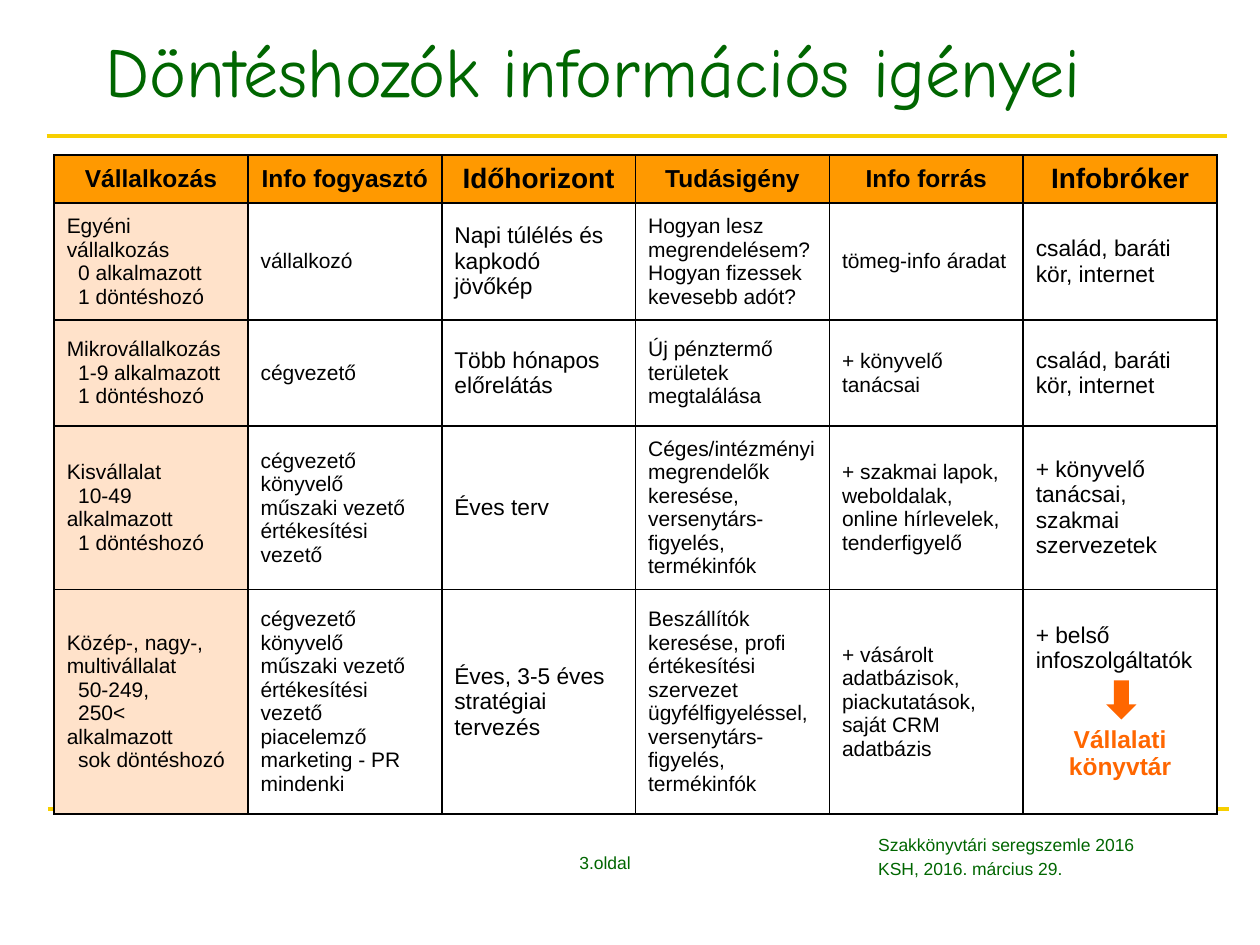
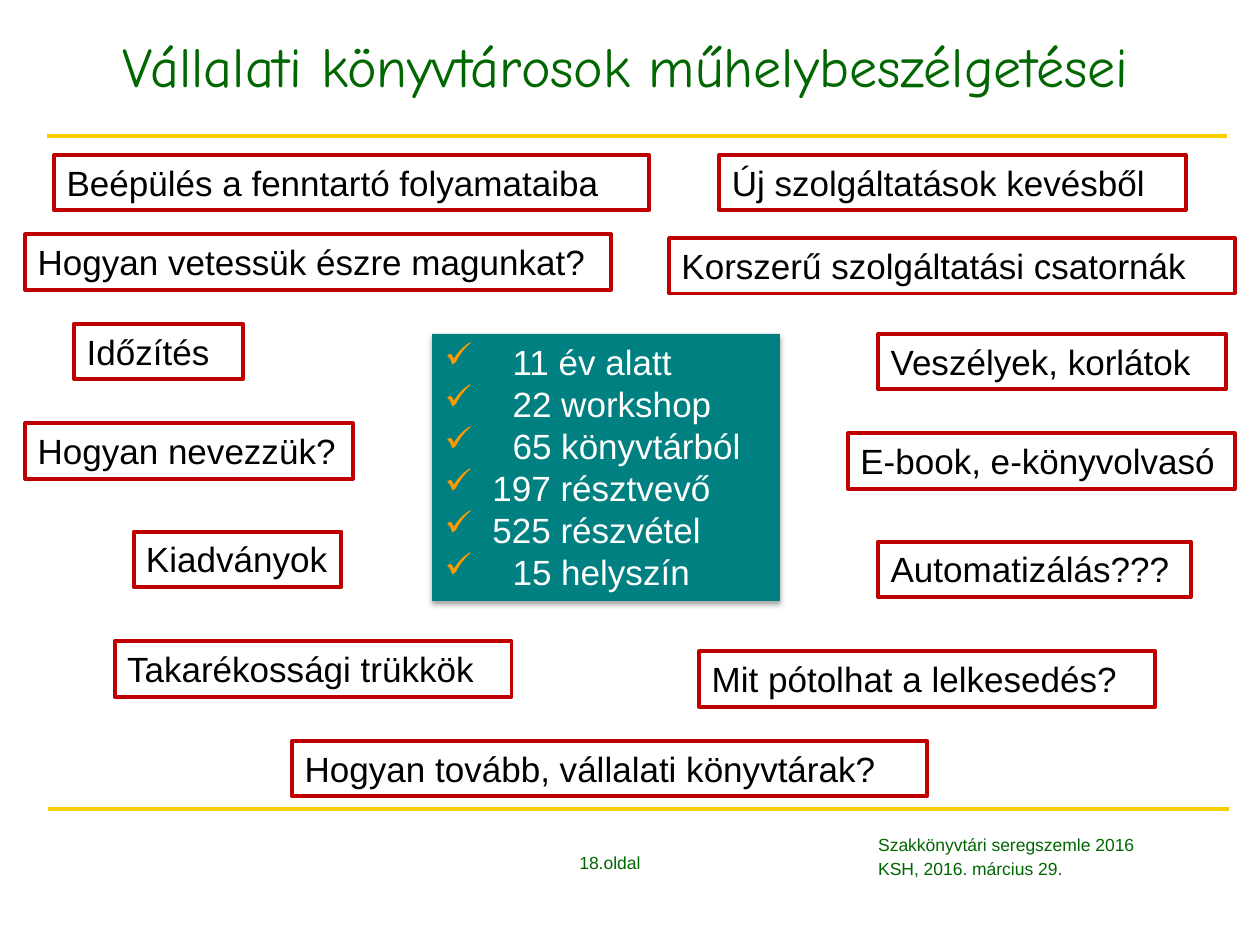
from lxml import etree
from pptx import Presentation
from pptx import util as u
from pptx.dml import color
from pptx.enum import shapes, text
from pptx.oxml import ns

GREEN, GOLD, BLACK, WHITE = "006600", "F7CF00", "000000", "FFFFFF"
AMBER, PEACH, ORANGE = "FF9900", "FFE2CA", "FF6600"
RED, TEAL = "C00000", "008080"
EVENT = ["Szakkönyvtári seregszemle 2016", "KSH, 2016. március 29."]

HEADS = ["Vállalkozás", "Info fogyasztó", "Időhorizont",
         "Tudásigény", "Info forrás", "Infobróker"]
NEEDS = [
    ["Egyéni vállalkozás\n0 alkalmazott\n1 döntéshozó",
     "vállalkozó",
     "Napi túlélés és kapkodó jövőkép",
     "Hogyan lesz megrendelésem?\nHogyan fizessek kevesebb adót?",
     "tömeg-info áradat",
     "család, baráti kör, internet"],
    ["Mikrovállalkozás\n1-9 alkalmazott\n1 döntéshozó",
     "cégvezető",
     "Több hónapos előrelátás",
     "Új pénztermő területek megtalálása",
     "+ könyvelő tanácsai",
     "család, baráti kör, internet"],
    ["Kisvállalat\n10-49 alkalmazott\n1 döntéshozó",
     "cégvezető\nkönyvelő\nműszaki vezető\nértékesítési vezető",
     "Éves terv",
     "Céges/intézményi megrendelők keresése, versenytárs-figyelés, termékinfók",
     "+ szakmai lapok, weboldalak,\nonline hírlevelek, tenderfigyelő",
     "+ könyvelő tanácsai, szakmai szervezetek"],
    ["Közép-, nagy-, multivállalat\n50-249,\n250< alkalmazott\nsok döntéshozó",
     "cégvezető\nkönyvelő\nműszaki vezető\nértékesítési vezető\n"
     "piacelemző\nmarketing - PR\nmindenki",
     "Éves, 3-5 éves stratégiai tervezés",
     "Beszállítók keresése, profi értékesítési szervezet ügyfélfigyeléssel, "
     "versenytárs-figyelés, termékinfók",
     "+ vásárolt adatbázisok,\npiackutatások, saját CRM adatbázis",
     "+ belső infoszolgáltatók\nVállalati könyvtár"],
]
HEIGHTS = [0.38, 0.93, 0.84, 1.22, 1.78]
WIDE = (2, 5)

TOPICS = [
    ("Beépülés a fenntartó folyamataiba", 0.43, 1.23, 4.72),
    ("Hogyan vetessük észre magunkat?", 0.2, 1.86, 4.65),
    ("Korszerű szolgáltatási csatornák", 5.31, 1.89, 4.49),
    ("Mit pótolhat a lelkesedés?", 5.55, 5.17, 3.62),
    ("Takarékossági trükkök", 0.91, 5.09, 3.15),
    ("E-book, e-könyvolvasó", 6.73, 3.44, 3.07),
    ("Új szolgáltatások kevésből", 5.71, 1.23, 3.7),
    ("Időzítés", 0.59, 2.57, 1.34),
    ("Hogyan nevezzük?", 0.2, 3.36, 2.6),
    ("Hogyan tovább, vállalati könyvtárak?", 2.32, 5.88, 5.04),
    ("Veszélyek, korlátok", 6.97, 2.65, 2.76),
    ("Kiadványok", 1.06, 4.22, 1.65),
    ("Automatizálás???", 6.97, 4.3, 2.48),
]
FACTS = ["11 év alatt", "22 workshop", "65 könyvtárból",
         "197 résztvevő", "525 részvétel", "15 helyszín"]


def rgb(code):
    return color.RGBColor.from_string(code)


def inches(*nums):
    return [u.Inches(n) for n in nums]


def apply(item, vals):
    for key, val in vals.items():
        setattr(item, key, val)


def paint(item, code):
    item.fill.solid()
    item.fill.fore_color.rgb = rgb(code)


def node(host, tag, **attrs):
    return etree.SubElement(host, ns.qn(tag), attrs)


def write(frame, lines, size, code, font="Arial", bold=False, **form):
    frame.text = "\n".join(lines)
    frame.word_wrap = True
    for para in frame.paragraphs:
        apply(para, {"alignment": text.PP_ALIGN.LEFT, **form})
        apply(para.font, {"size": u.Pt(size), "name": font, "bold": bold})
        para.font.color.rgb = rgb(code)
    return frame.paragraphs


def indent(para, first, left=0):
    props = para._p.get_or_add_pPr()
    props.set("marL", str(u.Inches(left)))
    props.set("indent", str(u.Inches(first)))
    return props


def add_rule(slide, left, top):
    rule = slide.shapes.add_connector(
        shapes.MSO_CONNECTOR.STRAIGHT, *inches(left, top, left + 9.37, top))
    rule.line.color.rgb = rgb(GOLD)
    rule.line.width = u.Pt(2)
    node(rule._element.spPr, "a:effectLst")


def add_text(slide, lines, box, pad, **form):
    frame = slide.shapes.add_textbox(*inches(*box)).text_frame
    side, edge = inches(*pad)
    apply(frame, {"margin_left": side, "margin_right": side,
                  "margin_top": edge, "margin_bottom": edge})
    paras = write(frame, lines, 10, GREEN, **form)
    return frame, paras


def add_page(deck, name, size, box, align, number):
    slide = deck.slides.add_slide(deck.slide_layouts[5])
    title = slide.shapes.title
    apply(title, dict(zip(("left", "top", "width", "height"), inches(*box))))
    write(title.text_frame, [name], size, GREEN, "Comic Neue",
          alignment=align, line_spacing=0.8)
    apply(title.text_frame, {"auto_size": text.MSO_AUTO_SIZE.NONE,
                             "vertical_anchor": text.MSO_ANCHOR.TOP})
    add_rule(slide, 0.38, 6.42)
    add_rule(slide, 0.37, 1.08)
    frame, _ = add_text(slide, [f"{number}.oldal"], (4.5, 6.71, 0.7, 0.27), (0.1, 0.05))
    frame.word_wrap = False
    _, paras = add_text(slide, EVENT, (6.97, 6.66, 2.84, 0.39), (0, 0),
                        line_spacing=u.Pt(9))
    paras[1].space_before = u.Pt(5)
    return slide


def add_shape(slide, kind, box, fill=None, edge=None):
    shape = slide.shapes.add_shape(kind, *inches(*box))
    shape.shadow.inherit = False
    if fill:
        paint(shape, fill)
    else:
        shape.fill.background()
    if edge:
        shape.line.color.rgb = rgb(edge)
        shape.line.width = u.Pt(2.25)
    else:
        shape.line.fill.background()
    shape.text_frame.vertical_anchor = text.MSO_ANCHOR.TOP
    return shape


def add_border(cell):
    props = cell._tc.get_or_add_tcPr()
    for spot, side in enumerate(("a:lnL", "a:lnR", "a:lnT", "a:lnB")):
        line = etree.Element(ns.qn(side), w=str(u.Pt(1)))
        node(node(line, "a:solidFill"), "a:srgbClr", val=BLACK)
        props.insert(spot, line)


def fill_cell(cell, words, row, col):
    head = row == 0
    size = (14 if head else 12) + (col in WIDE) * (2 if head else 1)
    align = text.PP_ALIGN.CENTER if head else text.PP_ALIGN.LEFT
    paras = write(cell.text_frame, words.split("\n"), size, BLACK,
                  bold=head, alignment=align)
    cell.vertical_anchor = text.MSO_ANCHOR.MIDDLE
    paint(cell, AMBER if head else WHITE if col else PEACH)
    add_border(cell)
    if col == 0:
        for para in paras[1:]:
            indent(para, 0.09)
    return paras


def add_needs(slide):
    rows = [HEADS] + NEEDS
    table = slide.shapes.add_table(
        len(rows), len(HEADS), *inches(0.43, 1.23, 9.23, sum(HEIGHTS))).table
    apply(table, {"first_row": False, "horz_banding": False})
    for col in table.columns:
        col.width = u.Inches(9.23 / len(HEADS))
    for row, words in enumerate(rows):
        table.rows[row].height = u.Inches(HEIGHTS[row])
        for col, word in enumerate(words):
            paras = fill_cell(table.cell(row, col), word, row, col)
    goal = paras[-1]
    apply(goal, {"alignment": text.PP_ALIGN.CENTER, "space_before": u.Pt(30)})
    apply(goal.font, {"size": u.Pt(14), "bold": True})
    goal.font.color.rgb = rgb(ORANGE)


def add_topic(slide, words, left, top, width):
    box = add_shape(slide, shapes.MSO_SHAPE.RECTANGLE,
                    (left, top, width, 0.44), edge=RED)
    write(box.text_frame, [words], 20, BLACK)


def add_shadow(shape):
    glow = node(shape._element.spPr.find(ns.qn("a:effectLst")), "a:outerShdw",
                blurRad=str(u.Pt(3.1)), dist=str(u.Pt(1.8)),
                dir="5400000", rotWithShape="0")
    node(node(glow, "a:srgbClr", val=BLACK), "a:alpha", val="35000")


def add_facts(slide):
    panel = add_shape(slide, shapes.MSO_SHAPE.RECTANGLE,
                      (3.43, 2.65, 2.76, 2.12), fill=TEAL)
    add_shadow(panel)
    panel.text_frame.text = "\n".join(FACTS)
    for para, fact in zip(panel.text_frame.paragraphs, FACTS):
        left = 0.38 if len(fact.split()[0]) == 3 else 0.54
        props = indent(para, -left, left)
        node(node(props, "a:buClr"), "a:srgbClr", val=AMBER)
        node(props, "a:buChar", char="✓")
        para.alignment = text.PP_ALIGN.LEFT
        apply(para.font, {"size": u.Pt(20), "name": "Arial"})
        para.font.color.rgb = rgb(WHITE)


def main():
    deck = Presentation()
    apply(deck, {"slide_width": u.Inches(10), "slide_height": u.Inches(7.5)})

    needs = add_page(deck, "Döntéshozók információs igényei", 40,
                     (0.74, 0.3, 9.22, 0.69), text.PP_ALIGN.LEFT, 3)
    add_needs(needs)
    add_shape(needs, shapes.MSO_SHAPE.DOWN_ARROW, (8.78, 5.4, 0.24, 0.31), ORANGE)

    talks = add_page(deck, "Vállalati könyvtárosok műhelybeszélgetései", 32,
                     (0.2, 0.3, 9.53, 0.69), text.PP_ALIGN.CENTER, 18)
    for topic in TOPICS:
        add_topic(talks, *topic)
    add_facts(talks)
    deck.save("out.pptx")


if __name__ == "__main__":
    main()
